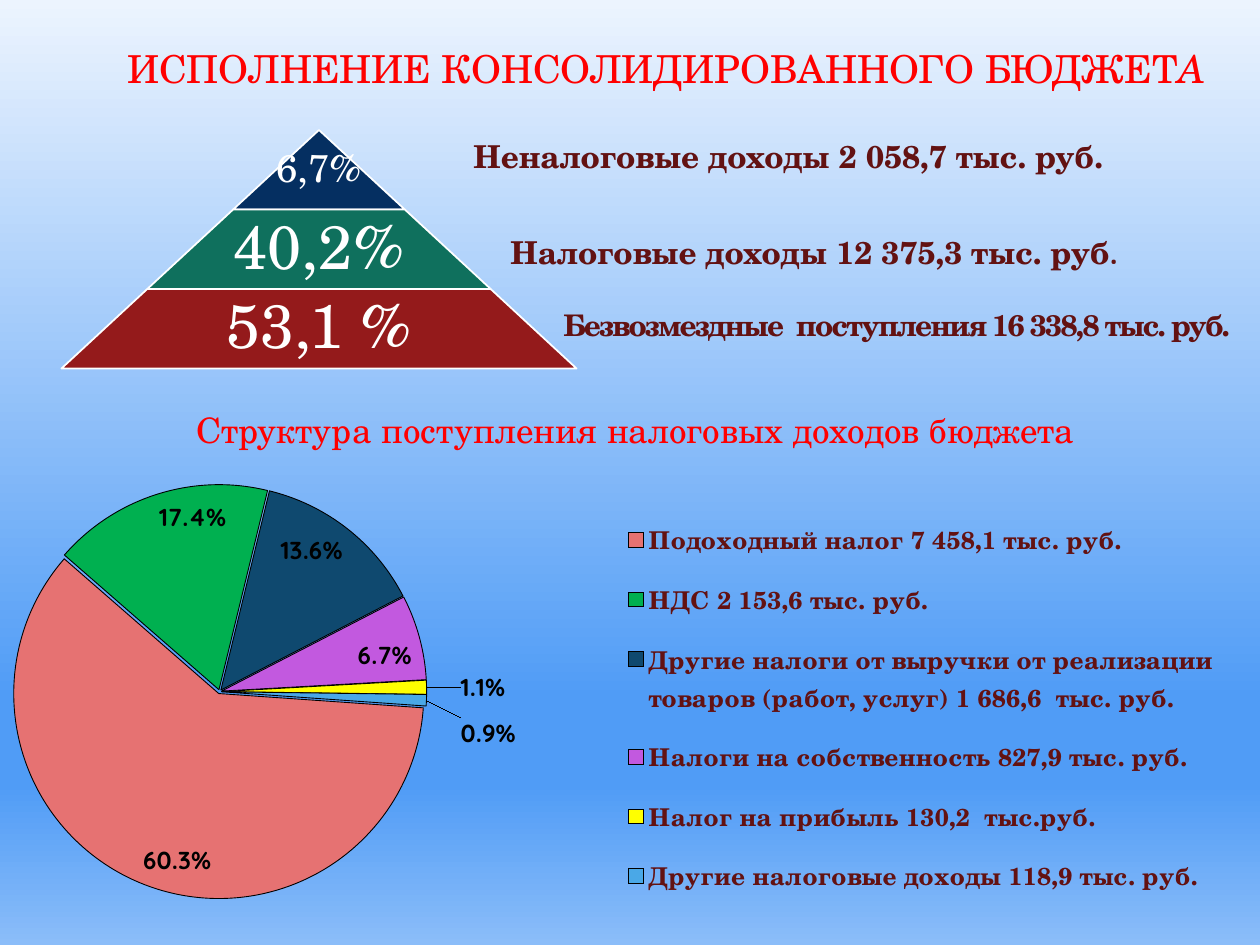
import pptx
import pptx.chart.data
import pptx.dml.color
import pptx.enum.chart
import pptx.enum.shapes
import pptx.enum.text
import pptx.oxml
import pptx.oxml.ns
import pptx.util
from lxml import etree

RGBColor = pptx.dml.color.RGBColor
Pt = pptx.util.Pt
qn = pptx.oxml.ns.qn
ALIGN = pptx.enum.text.PP_ALIGN
ANCHOR = pptx.enum.text.MSO_ANCHOR
LABEL = pptx.enum.chart.XL_LABEL_POSITION

EMU_PER_PX = 914400 / 126
SERIF = "TeX Gyre Schola"
SANS = "Quicksand"

RED = RGBColor(0xFF, 0x00, 0x00)
MAROON = RGBColor(0x63, 0x12, 0x12)
WHITE = RGBColor(0xFF, 0xFF, 0xFF)
BLACK = RGBColor(0x00, 0x00, 0x00)
NAVY = RGBColor(0x05, 0x2F, 0x61)
TEAL = RGBColor(0x0F, 0x70, 0x5D)
BRICK = RGBColor(0x94, 0x1A, 0x1B)
CHART_TEXT = RGBColor(0x14, 0x61, 0x94)
SKY_STOPS = [
    (0, RGBColor(0xEC, 0xF4, 0xFE)),
    (74, RGBColor(0x50, 0x9C, 0xF6)),
    (83, RGBColor(0x50, 0x9C, 0xF6)),
    (100, RGBColor(0x8B, 0xBD, 0xF9)),
]

PYRAMID_CENTER = 319
PYRAMID_TOP = 130
TIER_HEIGHT = 79.5
TIER_SLOPE = 1.08
TIERS = [
    ("6,7%", 22, NAVY, 171, 4),
    ("40,2%", 35, TEAL, 223, 6),
    ("53,1 %", 35, BRICK, 335, 6),
]

TAXES = [
    ("Подоходный налог 7 458,1 тыс. руб.", 0.603, RGBColor(0xE6, 0x72, 0x72)),
    ("НДС 2 153,6 тыс. руб.", 0.174, RGBColor(0x00, 0xB0, 0x50)),
    ("Другие налоги от выручки от реализации товаров (работ, услуг) 1 686,6  тыс. руб.",
     0.136, RGBColor(0x0F, 0x49, 0x6F)),
    ("Налоги на собственность 827,9 тыс. руб.", 0.067, RGBColor(0xC2, 0x59, 0xDF)),
    ("Налог на прибыль 130,2  тыс.руб.", 0.011, RGBColor(0xFF, 0xFF, 0x00)),
    ("Другие налоговые доходы 118,9 тыс. руб.", 0.009, RGBColor(0x4A, 0xA8, 0xE7)),
]
MOVED_LABELS = {4: {"x": 0.02, "y": 0}, 5: {"x": 0.02, "y": 0.07}}


def px(length):
    return pptx.util.Emu(round(length * EMU_PER_PX))


def paint_background(slide):
    fill = slide.background.fill
    fill.gradient()
    fill.gradient_angle = 270
    stops = slide.element.find(".//" + qn("a:gsLst"))
    for stop in list(stops):
        stops.remove(stop)
    for percent, color in SKY_STOPS:
        stop = etree.SubElement(stops, qn("a:gs"), pos=str(percent * 1000))
        etree.SubElement(stop, qn("a:srgbClr"), val=str(color))


def style_font(font, name, size, color, bold=False):
    font.name = name
    font.size = Pt(size)
    font.color.rgb = color
    font.bold = bold


def add_text(slide, box, text, size, color, bold=False, align=ALIGN.LEFT,
             anchor=ANCHOR.TOP, inset=None):
    frame = slide.shapes.add_textbox(*map(px, box)).text_frame
    frame.word_wrap = True
    frame.vertical_anchor = anchor
    if inset is not None:
        frame.margin_left = frame.margin_right = px(inset)
        frame.margin_top = frame.margin_bottom = px(inset)
    paragraph = frame.paragraphs[0]
    paragraph.alignment = align
    style_font(paragraph.font, SERIF, size, color, bold)
    paragraph.add_run().text = text
    return paragraph


def add_pyramid(slide):
    for level, (text, size, color, text_width, inset) in enumerate(TIERS):
        top = PYRAMID_TOP + level * TIER_HEIGHT
        width = 2 * TIER_SLOPE * TIER_HEIGHT * (level + 1)
        tier = slide.shapes.add_shape(
            pptx.enum.shapes.MSO_SHAPE.TRAPEZOID,
            px(PYRAMID_CENTER - width / 2), px(top), px(width), px(TIER_HEIGHT))
        tier.adjustments[0] = TIER_SLOPE
        tier.shadow.inherit = False
        tier.fill.solid()
        tier.fill.fore_color.rgb = color
        tier.line.color.rgb = WHITE
        tier.line.width = Pt(1)
        box = (PYRAMID_CENTER - text_width / 2, top, text_width, TIER_HEIGHT)
        paragraph = add_text(slide, box, text, size, WHITE, align=ALIGN.CENTER,
                             anchor=ANCHOR.MIDDLE, inset=inset)
        paragraph.line_spacing = 0.9


def set_layout(parent, index, **values):
    for layout in parent.findall(qn("c:layout")):
        parent.remove(layout)
    layout = etree.Element(qn("c:layout"))
    manual = etree.SubElement(layout, qn("c:manualLayout"))
    for tag, value in values.items():
        etree.SubElement(manual, qn("c:" + tag), val=str(value))
    parent.insert(index, layout)


def move_label(series, index, offset):
    label = series.points[index].data_label
    style_font(label.font, SANS, 14, BLACK, True)
    label.position = LABEL.OUTSIDE_END
    element = series.data_labels._element.find(
        f"{qn('c:dLbl')}[{qn('c:idx')}][{list(MOVED_LABELS).index(index) + 1}]")
    set_layout(element, 1, **offset)
    number_format = etree.Element(qn("c:numFmt"), formatCode="0.0%", sourceLinked="0")
    element.insert(2, number_format)


def add_tax_pie(slide):
    data = pptx.chart.data.CategoryChartData(number_format="0.0%")
    data.categories = [name for name, _, _ in TAXES]
    data.add_series("Series 1", [share for _, share, _ in TAXES])
    chart = slide.shapes.add_chart(
        pptx.enum.chart.XL_CHART_TYPE.PIE, px(-81), px(476), px(1336), px(469), data).chart
    chart.has_title = False
    style_font(chart.font, SANS, 18, CHART_TEXT)

    chart.has_legend = True
    legend = chart.legend
    legend.position = pptx.enum.chart.XL_LEGEND_POSITION.RIGHT
    legend.include_in_layout = False
    style_font(legend.font, SERIF, 14, MAROON, True)
    set_layout(legend._element, 1, xMode="edge", yMode="edge",
               x=0.52, y=0.05, w=0.46, h=0.89)

    plot = chart.plots[0]
    plot.vary_by_categories = True
    set_layout(plot._element.getparent(), 0, layoutTarget="inner", xMode="edge",
               yMode="edge", x=0.07, y=0, w=0.31, h=0.92)
    for angle in plot._element.findall(qn("c:firstSliceAng")):
        plot._element.remove(angle)
    etree.SubElement(plot._element, qn("c:firstSliceAng"), val="94")

    series = plot.series[0]
    for index, (_, _, color) in enumerate(TAXES):
        point_format = series.points[index].format
        point_format.fill.solid()
        point_format.fill.fore_color.rgb = color
        point_format.line.color.rgb = BLACK
        point_format.line.width = Pt(0.5)
    explosion = etree.Element(qn("c:explosion"), val="1")
    series._element.find(qn("c:dPt")).addprevious(explosion)

    labels = series.data_labels
    labels.show_value = True
    labels.show_percentage = False
    labels.number_format = "0.0%"
    labels.number_format_is_linked = False
    labels.position = LABEL.INSIDE_END
    style_font(labels.font, SANS, 14, BLACK, True)
    for index, offset in MOVED_LABELS.items():
        move_label(series, index, offset)


def main():
    presentation = pptx.Presentation()
    presentation.slide_width = px(1260)
    presentation.slide_height = px(945)
    slide = presentation.slides.add_slide(presentation.slide_layouts[6])
    paint_background(slide)

    title = add_text(slide, (115, 6, 1111, 91), "ИСПОЛНЕНИЕ КОНСОЛИДИРОВАННОГО БЮДЖЕТ",
                     22, RED, anchor=ANCHOR.BOTTOM)
    ending = title.add_run()
    ending.text = "А"
    ending.font.italic = True
    add_text(slide, (100, 402, 1071, 193), "Структура поступления налоговых доходов бюджета",
             20, RED, align=ALIGN.CENTER)

    add_pyramid(slide)
    add_text(slide, (461, 131, 665, 50), "Неналоговые доходы 2 058,7 тыс. руб.", 18, MAROON, True)
    tax_income = add_text(slide, (498, 227, 714, 50), "Налоговые доходы 12 375,3 тыс. руб",
                          18, MAROON, True)
    period = tax_income.add_run()
    period.text = "."
    period.font.name = SANS
    grants = add_text(slide, (551, 301, 694, 49),
                      "Безвозмездные  поступления 16 338,8 тыс. руб.", 17, MAROON, True)
    grants.runs[0].font._element.set("spc", "-100")

    add_tax_pie(slide)
    presentation.save("out.pptx")


if __name__ == "__main__":
    main()
